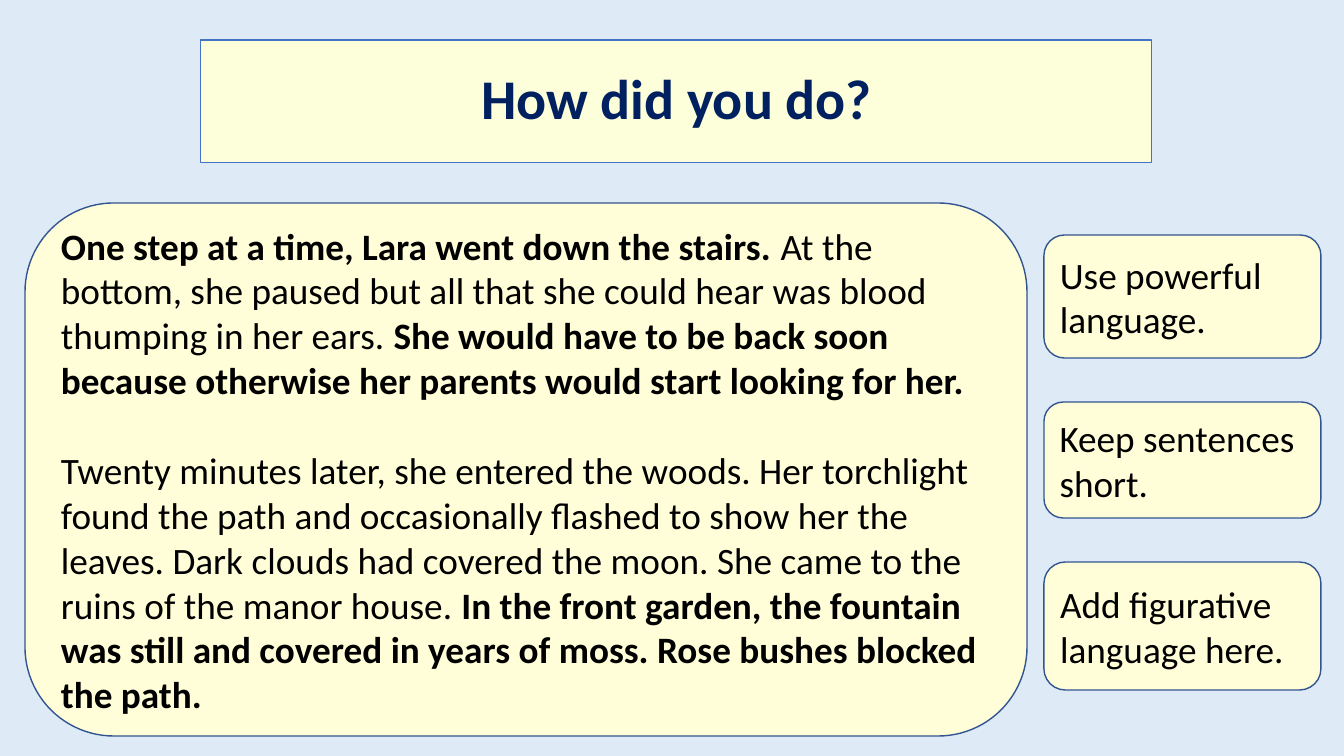
"""Build the story-opening review slide with its three writing hints."""
from dataclasses import dataclass

from pptx import Presentation
from pptx.dml.color import RGBColor
from pptx.enum.shapes import MSO_SHAPE
from pptx.enum.text import MSO_ANCHOR, PP_ALIGN
from pptx.slide import Slide
from pptx.util import Emu, Pt

EMU_PER_PX = 12192000 / 1344
SLIDE_WIDTH, SLIDE_HEIGHT = 1344, 756
FONT_NAME = "Calibri"

PALE_BLUE = RGBColor(0xDE, 0xEB, 0xF7)
TITLE_CREAM = RGBColor(0xFD, 0xFE, 0xDA)
CREAM = RGBColor(0xFF, 0xFE, 0xD8)
TITLE_EDGE = RGBColor(0x44, 0x72, 0xC4)
PANEL_EDGE = RGBColor(0x32, 0x54, 0x91)
NAVY = RGBColor(0x00, 0x20, 0x60)
BLACK = RGBColor(0x00, 0x00, 0x00)


@dataclass(frozen=True)
class Phrase:
    """A stretch of text in one weight."""

    text: str
    bold: bool = False


@dataclass(frozen=True)
class Look:
    """Outline, fill and text format shared by panels."""

    outline: MSO_SHAPE
    fill: RGBColor
    edge: RGBColor
    edge_width: float
    font_size: float
    font_color: RGBColor
    paragraph_format: dict


@dataclass(frozen=True)
class Panel:
    """A text panel placed in px, with its paragraphs."""

    left: int
    top: int
    width: int
    height: int
    look: Look
    paragraphs: tuple[tuple[Phrase, ...], ...]


TITLE_LOOK = Look(MSO_SHAPE.RECTANGLE, TITLE_CREAM, TITLE_EDGE, 0.75, 40, NAVY,
                  {"alignment": PP_ALIGN.CENTER, "line_spacing": 0.9})
WRITING_LOOK = Look(MSO_SHAPE.ROUNDED_RECTANGLE, CREAM, PANEL_EDGE, 1, 26.67, BLACK,
                    {"alignment": PP_ALIGN.LEFT})
STORY_PARAGRAPH_GAP = Pt(32.5)

TITLE = Panel(201, 40, 951, 123, TITLE_LOOK, ((Phrase("How did you do?", True),),))
STORY = Panel(25, 203, 1002, 533, WRITING_LOOK, (
    (
        Phrase("One step at a time, Lara went down the stairs.", True),
        Phrase(" At the bottom, she paused but all that she could hear was "
               "blood thumping in her ears. "),
        Phrase("She would have to be back soon because otherwise her parents "
               "would start looking for her.", True),
    ),
    (
        Phrase("Twenty minutes later, she entered the woods. Her torchlight found "
               "the path and occasionally flashed to show her the leaves. Dark "
               "clouds had covered the moon. She came to the ruins of the manor "
               "house. "),
        Phrase("In the front garden, the fountain was still and covered in years "
               "of moss. Rose bushes blocked the path.", True),
    ),
))
HINT_LEFT, HINT_TOP, HINT_WIDTH, HINT_GAP = 1044, 235, 277, 44
HINTS = (
    ("Use powerful language.", 123),
    ("Keep sentences short.", 116),
    ("Add figurative language here.", 128),
)


def px(length: int) -> Emu:
    """Turn px into EMU."""
    return Emu(round(length * EMU_PER_PX))


def apply_format(target: object, values: dict) -> None:
    """Set each named attribute of the target."""
    for name, value in values.items():
        setattr(target, name, value)


def stack_hints() -> list[Panel]:
    """Stack the hint panels downwards with one equal gap."""
    panels = []
    top = HINT_TOP
    for hint, height in HINTS:
        panels.append(Panel(HINT_LEFT, top, HINT_WIDTH, height, WRITING_LOOK,
                            ((Phrase(hint),),)))
        top += height + HINT_GAP
    return panels


def draw_panel(slide: Slide, panel: Panel) -> None:
    """Draw one panel and its text."""
    look = panel.look
    box = slide.shapes.add_shape(look.outline, px(panel.left), px(panel.top),
                                 px(panel.width), px(panel.height))
    box.shadow.inherit = False
    box.fill.solid()
    box.fill.fore_color.rgb = look.fill
    box.line.color.rgb = look.edge
    box.line.width = Pt(look.edge_width)
    frame = box.text_frame
    apply_format(frame, {"word_wrap": True, "vertical_anchor": MSO_ANCHOR.MIDDLE})
    for index, phrases in enumerate(panel.paragraphs):
        paragraph = frame.add_paragraph() if index else frame.paragraphs[0]
        apply_format(paragraph, look.paragraph_format)
        if index:
            paragraph.space_before = STORY_PARAGRAPH_GAP
        for phrase in phrases:
            run = paragraph.add_run()
            run.text = phrase.text
            apply_format(run.font, {"name": FONT_NAME, "size": Pt(look.font_size),
                                    "bold": phrase.bold})
            run.font.color.rgb = look.font_color


def main() -> None:
    """Create the presentation and save it."""
    presentation = Presentation()
    apply_format(presentation, {"slide_width": px(SLIDE_WIDTH),
                                "slide_height": px(SLIDE_HEIGHT)})
    slide = presentation.slides.add_slide(presentation.slide_layouts[6])
    slide.background.fill.solid()
    slide.background.fill.fore_color.rgb = PALE_BLUE
    for panel in (TITLE, STORY, *stack_hints()):
        draw_panel(slide, panel)
    presentation.save("out.pptx")


if __name__ == "__main__":
    main()
